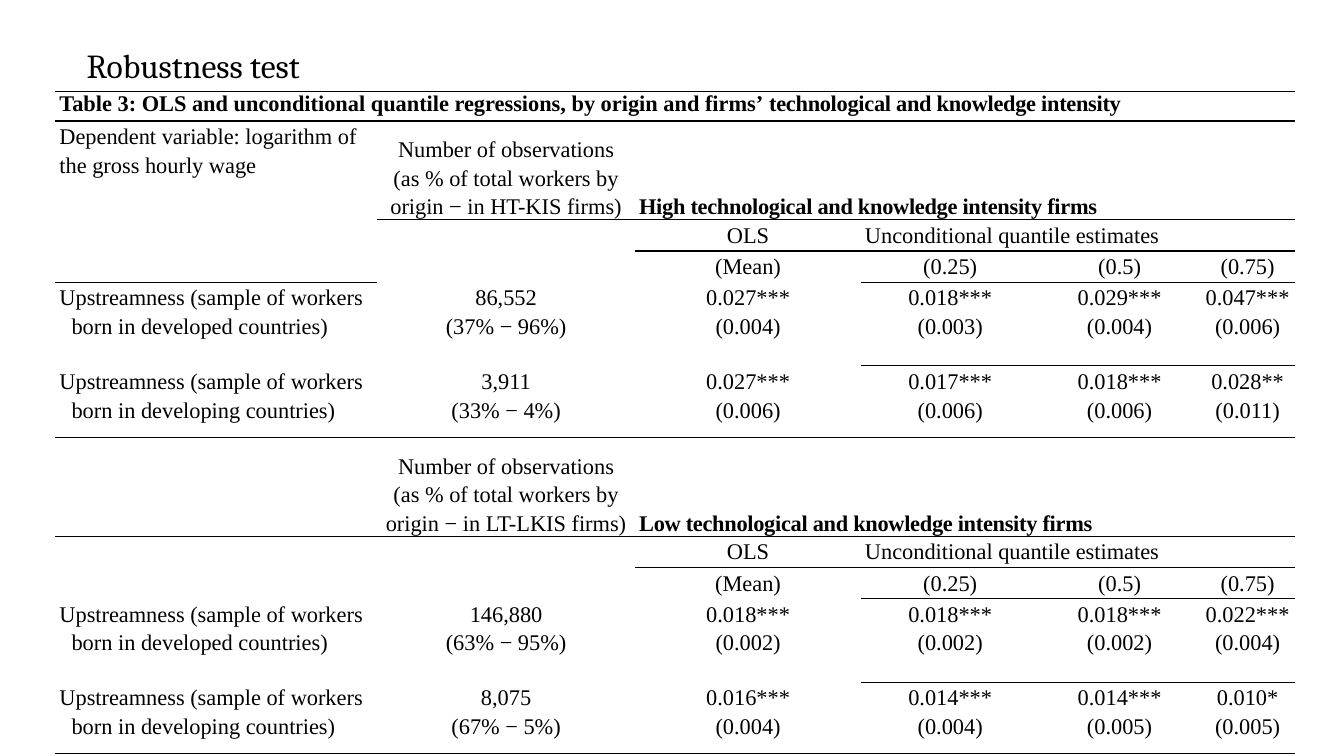
"""Build the robustness test slide with its regression table."""
from lxml.etree import SubElement
from pptx import Presentation
from pptx.dml.color import RGBColor
from pptx.enum.text import MSO_ANCHOR as Anchor, PP_ALIGN as Align
from pptx.oxml.ns import qn
from pptx.util import Inches, Pt

THEME = {
    "ink": RGBColor(0, 0, 0), "ink_hex": "000000",
    "title_font": "Cambria", "title_size": Pt(24),
    "table_font": "Times New Roman", "table_size": Pt(16),
    "rule_width": Pt(1), "plain_style": "{2D5ABB26-0587-4C30-8999-92F81FD0307C}",
}
TITLE_FORMAT = {"name": THEME["title_font"], "size": THEME["title_size"], "bold": False}
TABLE_FORMAT = {"name": THEME["table_font"], "size": THEME["table_size"], "bold": False}
MARGINS = {"margin_left": Inches(0.04), "margin_right": Inches(0.04),
           "margin_top": 0, "margin_bottom": 0}
COLUMNS = [3.19, 2.56, 2.24, 1.77, 1.59, 0.95]
PANEL_ROWS = [0.98, 0.31, 0.31, 0.83, 0.71]
ROWS = [0.29] + PANEL_ROWS * 2
LAST = len(COLUMNS) - 1

PANELS = [
    ("High", "HT-KIS", [
        [("86,552", "(37% − 96%)"), ("0.027***", "(0.004)"), ("0.018***", "(0.003)"),
         ("0.029***", "(0.004)"), ("0.047***", "(0.006)")],
        [("3,911", "(33% − 4%)"), ("0.027***", "(0.006)"), ("0.017***", "(0.006)"),
         ("0.018***", "(0.006)"), ("0.028**", "(0.011)")],
    ]),
    ("Low", "LT-LKIS", [
        [("146,880", "(63% − 95%)"), ("0.018***", "(0.002)"), ("0.018***", "(0.002)"),
         ("0.018***", "(0.002)"), ("0.022***", "(0.004)")],
        [("8,075", "(67% − 5%)"), ("0.016***", "(0.004)"), ("0.014***", "(0.004)"),
         ("0.014***", "(0.005)"), ("0.010*", "(0.005)")],
    ]),
]


def style_run(run, formats, tight=False):
    for key, value in formats.items():
        setattr(run.font, key, value)
    run.font.color.rgb = THEME["ink"]
    if tight:
        run.font._element.set("spc", "-20")


def write(cell, lines, align=Align.CENTER, heading=False):
    for index, line in enumerate(lines):
        frame = cell.text_frame
        paragraph = frame.paragraphs[0] if index == 0 else frame.add_paragraph()
        paragraph.alignment = align
        paragraph.line_spacing = 1.15
        run = paragraph.add_run()
        run.text = line
        style_run(run, {**TABLE_FORMAT, "bold": heading}, tight=heading)


deck = Presentation()
deck.slide_width, deck.slide_height = Inches(13.33), Inches(7.5)
slide = deck.slides.add_slide(deck.slide_layouts[5])

title = slide.shapes.title
title.left, title.top, title.width, title.height = map(Inches, (0.76, 0.4, 6.67, 0.5))
title.text_frame.vertical_anchor = Anchor.TOP
heading = title.text_frame.paragraphs[0]
heading.alignment = Align.LEFT
heading_run = heading.add_run()
heading_run.text = "Robustness test"
style_run(heading_run, TITLE_FORMAT)

results = slide.shapes.add_table(len(ROWS), len(COLUMNS), Inches(0.55), Inches(0.91),
                                 Inches(sum(COLUMNS)), Inches(sum(ROWS))).table
results.first_row = results.horz_banding = False
results._tbl.tblPr.find(qn("a:tableStyleId")).text = THEME["plain_style"]
for column, width in zip(results.columns, COLUMNS):
    column.width = Inches(width)
for row, height in zip(results.rows, ROWS):
    row.height = Inches(height)

caption_cell = results.cell(0, 0)
caption_cell.merge(results.cell(0, LAST))
caption = caption_cell.text_frame.paragraphs[0]
caption.alignment = Align.JUSTIFY
caption.space_after = Pt(6)
for part, tight in [
    ("Table 3: OLS and unconditional quantile regressions, by origin and firms’", False),
    (" technological and knowledge intensity", True),
]:
    caption_run = caption.add_run()
    caption_run.text = part
    style_run(caption_run, {**TABLE_FORMAT, "bold": True}, tight)

variable_cell = results.cell(1, 0)
variable_cell.merge(results.cell(3, 0))
write(variable_cell, ["Dependent variable: logarithm of the gross hourly wage"], Align.LEFT)

rule_starts = {0: 0, len(ROWS): 0}
for panel, (level, sector, samples) in enumerate(PANELS):
    top = 1 + panel * len(PANEL_ROWS)
    rule_starts.update({top: 0, top + 1: 2, top + 2: 3, top + 3: 3})

    count_cell, intensity_cell = results.cell(top, 1), results.cell(top, 2)
    intensity_cell.merge(results.cell(top, LAST))
    count_cell.vertical_anchor = intensity_cell.vertical_anchor = Anchor.BOTTOM
    write(count_cell, ["Number of observations",
                       f"(as % of total workers by origin − in {sector} firms)"])
    write(intensity_cell, [f"{level} technological and knowledge intensity firms"],
          Align.LEFT, heading=True)

    write(results.cell(top + 1, 2), ["OLS"])
    results.cell(top + 1, 3).merge(results.cell(top + 1, LAST))
    write(results.cell(top + 1, 3), ["Unconditional quantile estimates"], Align.LEFT)
    for c, label in enumerate(["(Mean)", "(0.25)", "(0.5)", "(0.75)"], 2):
        write(results.cell(top + 2, c), [label])

    for r, (origin, estimates) in enumerate(zip(["developed", "developing"], samples), top + 3):
        sample_cell = results.cell(r, 0)
        write(sample_cell, [f"Upstreamness (sample of workers born in {origin} countries)"],
              Align.LEFT)
        indent = sample_cell.text_frame.paragraphs[0]._p.get_or_add_pPr()
        indent.set("marL", str(Inches(0.12)))
        indent.set("indent", str(-Inches(0.12)))
        for c, estimate in enumerate(estimates, 1):
            write(results.cell(r, c), estimate)

for r in range(len(ROWS)):
    for c in range(len(COLUMNS)):
        cell = results.cell(r, c)
        for key, value in MARGINS.items():
            setattr(cell, key, value)
        for edge, boundary in (("a:lnT", r), ("a:lnB", r + 1)):
            if c >= rule_starts.get(boundary, len(COLUMNS)):
                rule = SubElement(cell._tc.get_or_add_tcPr(), qn(edge),
                                  w=str(THEME["rule_width"]))
                SubElement(SubElement(rule, qn("a:solidFill")), qn("a:srgbClr"),
                           val=THEME["ink_hex"])
        cell.fill.background()
        if not cell.text_frame.text:
            SubElement(cell.text_frame.paragraphs[0]._p, qn("a:endParaRPr"),
                       sz=str(int(THEME["table_size"].pt * 100)))

deck.save("out.pptx")
